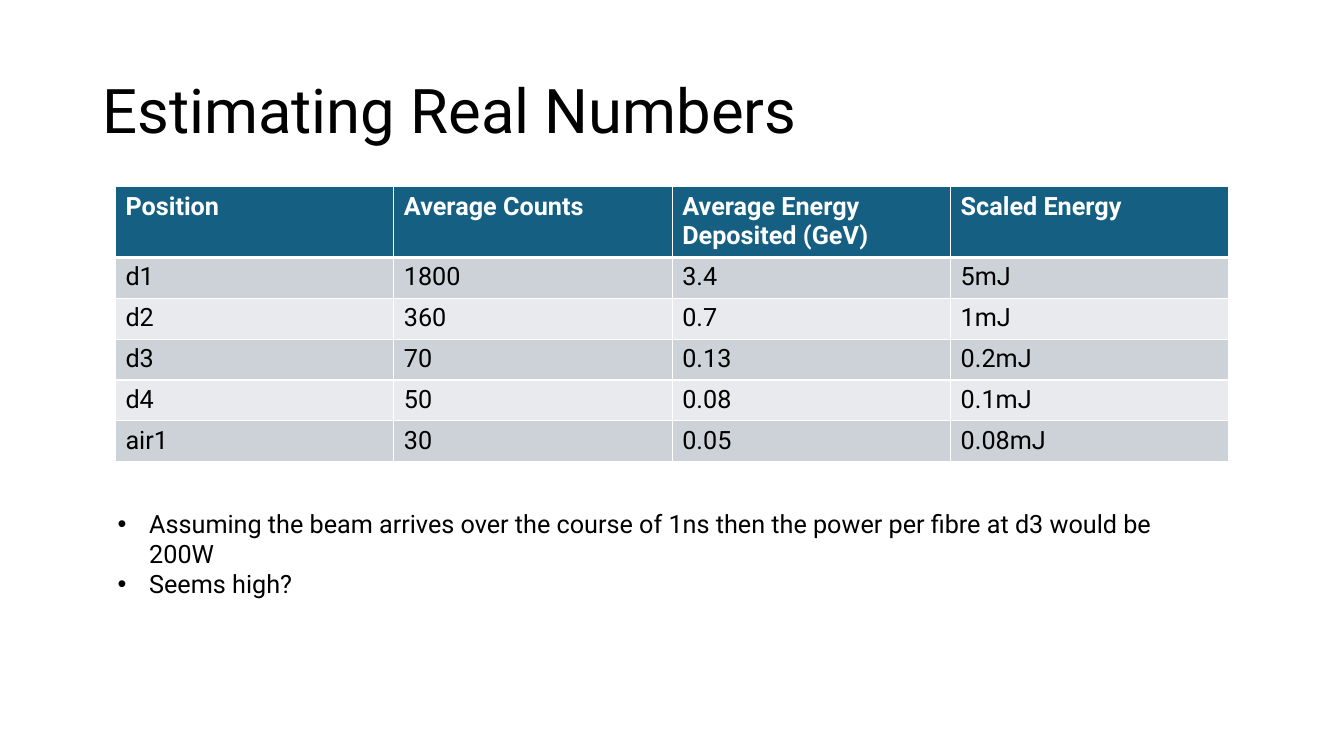
from lxml import etree
from pptx import Presentation
from pptx.dml.color import RGBColor
from pptx.enum.text import MSO_ANCHOR
from pptx.oxml.ns import qn
from pptx.util import Pt

TOP = MSO_ANCHOR.TOP
MIDDLE = MSO_ANCHOR.MIDDLE
BLACK = RGBColor(0x00, 0x00, 0x00)
WHITE = RGBColor(0xFF, 0xFF, 0xFF)
TEAL = RGBColor(0x15, 0x60, 0x82)
BANDS = (RGBColor(0xCC, 0xD2, 0xD8), RGBColor(0xE8, 0xEA, 0xED))

READINGS = [
    ("Position", "Average Counts", "Average Energy Deposited (GeV)", "Scaled Energy"),
    ("d1", "1800", "3.4", "5mJ"),
    ("d2", "360", "0.7", "1mJ"),
    ("d3", "70", "0.13", "0.2mJ"),
    ("d4", "50", "0.08", "0.1mJ"),
    ("air1", "30", "0.05", "0.08mJ"),
]
REMARKS = [
    "Assuming the beam arrives over the course of 1ns then the power per fibre at d3 would be 200W",
    "Seems high?",
]


class SlideBuilder:
    """Hold the text style and the current slide, and add elements to it."""

    def __init__(self, slide, font_name):
        self.slide = slide
        self.font_name = font_name

    def add_text(self, paragraph, text, size=18, color=BLACK, bold=False):
        run = paragraph.add_run()
        run.text = text
        style = {"name": self.font_name, "size": Pt(size), "bold": bold}
        for attribute, value in style.items():
            setattr(run.font, attribute, value)
        run.font.color.rgb = color

    def text_frame(self, left, top, width, height, anchor=TOP):
        box = self.slide.shapes.add_textbox(Pt(left), Pt(top), Pt(width), Pt(height))
        box.text_frame.word_wrap = True
        box.text_frame.vertical_anchor = anchor
        return box.text_frame

    def title(self, text, left, top, width, height):
        paragraph = self.text_frame(left, top, width, height, MIDDLE).paragraphs[0]
        paragraph.line_spacing = 0.9
        self.add_text(paragraph, text, size=44)

    def bullets(self, items, left, top, width, height, indent=22.5):
        frame = self.text_frame(left, top, width, height)
        for index, item in enumerate(items):
            paragraph = frame.add_paragraph() if index else frame.paragraphs[0]
            properties = paragraph._p.get_or_add_pPr()
            properties.set("marL", str(Pt(indent)))
            properties.set("indent", str(-Pt(indent)))
            etree.SubElement(properties, qn("a:buFont"), typeface="Arial")
            etree.SubElement(properties, qn("a:buChar"), char="•")
            self.add_text(paragraph, item)

    def borders(self, cell, widths):
        properties = cell._tc.get_or_add_tcPr()
        for side, width in widths.items():
            line = etree.SubElement(properties, qn(f"a:ln{side}"), w=str(Pt(width)))
            fill = etree.SubElement(line, qn("a:solidFill"))
            etree.SubElement(fill, qn("a:srgbClr"), val=str(WHITE))

    def table(self, rows, left, top, width, header_height, row_height):
        column_count = len(rows[0])
        heights = [header_height] + [row_height] * (len(rows) - 1)
        table = self.slide.shapes.add_table(
            len(rows), column_count, Pt(left), Pt(top), Pt(width), Pt(sum(heights))
        ).table
        for column in table.columns:
            column.width = Pt(width / column_count)
        for row_index, texts in enumerate(rows):
            table.rows[row_index].height = Pt(heights[row_index])
            is_header = row_index == 0
            for column_index, text in enumerate(texts):
                cell = table.cell(row_index, column_index)
                top_width = 3 if row_index == 1 else 1
                bottom_width = 3 if is_header else 1
                self.borders(cell, {"L": 1, "R": 1, "T": top_width, "B": bottom_width})
                cell.fill.solid()
                cell.fill.fore_color.rgb = TEAL if is_header else BANDS[(row_index - 1) % 2]
                color = WHITE if is_header else BLACK
                self.add_text(cell.text_frame.paragraphs[0], text, color=color, bold=is_header)


def main():
    presentation = Presentation()
    presentation.slide_width = Pt(960)
    presentation.slide_height = Pt(540)
    slide = presentation.slides.add_slide(presentation.slide_layouts[6])
    builder = SlideBuilder(slide, "Roboto")
    builder.title("Estimating Real Numbers", 66, 28.75, 828, 104.4)
    builder.table(READINGS, 82.5, 133.4, 795.5, 49, 29.2)
    builder.bullets(REMARKS, 77, 359.5, 798.5, 51)
    presentation.save("out.pptx")


if __name__ == "__main__":
    main()
